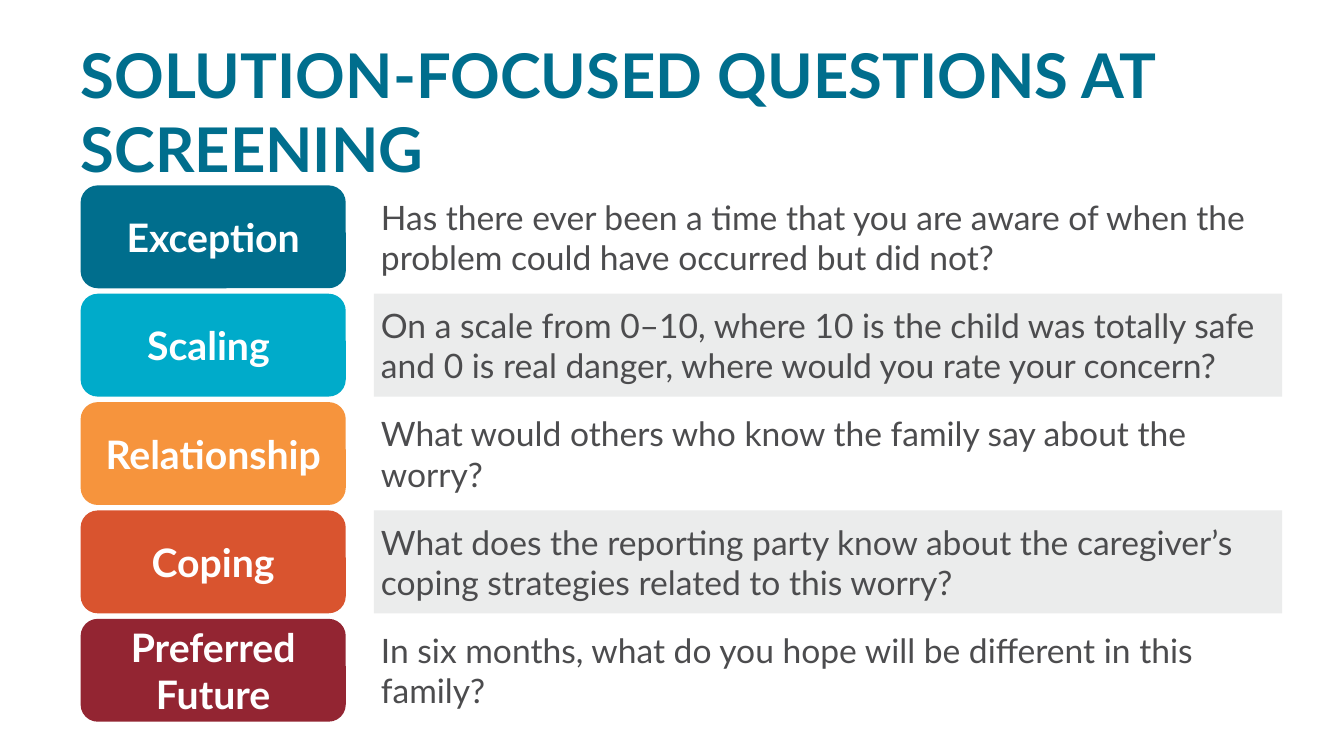
from lxml.etree import SubElement
from pptx import Presentation
from pptx.dml.color import RGBColor
from pptx.enum.shapes import MSO_SHAPE
from pptx.enum.text import MSO_ANCHOR, MSO_AUTO_SIZE, PP_ALIGN
from pptx.oxml.ns import qn
from pptx.util import Pt

TEAL = RGBColor(0x00, 0x6E, 0x8D)
CYAN = RGBColor(0x00, 0xAB, 0xCA)
ORANGE = RGBColor(0xF6, 0x94, 0x3D)
RUST = RGBColor(0xD9, 0x54, 0x2F)
MAROON = RGBColor(0x93, 0x25, 0x32)
WHITE = RGBColor(0xFF, 0xFF, 0xFF)
PALE_GREY = RGBColor(0xE9, 0xEA, 0xEA)
DARK_GREY = RGBColor(0x4C, 0x4C, 0x4E)

FIRST_TOP, ROW_PITCH, ROW_HEIGHT = 132.4, 77.4, 73.5
LABEL_LEFT, LABEL_WIDTH = 57.6, 189.4
QUESTION_LEFT, QUESTION_WIDTH = 267.1, 648.7
LABEL_INSETS = (0, 8.6, 0, 8.6)
QUESTION_INSETS = (5, 5.8, 8, 5.8)
QUESTION_OPACITY = 90

QUESTIONS = [
    ("Exception", TEAL,
     "Has there ever been a time that you are aware of when the problem "
     "could have occurred but did not?"),
    ("Scaling ", CYAN,
     "On a scale from 0–10, where 10 is the child was totally safe and 0 is "
     "real danger, where would you rate your concern?"),
    ("Relationship", ORANGE,
     "What would others who know the family say about the worry?"),
    ("Coping", RUST,
     "What does the reporting party know about the caregiver’s coping "
     "strategies related to this worry?"),
    ("Preferred Future", MAROON,
     "In six months, what do you hope will be different in this family?"),
]


def write_text(shape, text, size, color, bold, align, insets):
    frame = shape.text_frame
    frame.text = text
    left, top, right, bottom = (Pt(inset) for inset in insets)
    frame_format = {
        "word_wrap": True,
        "auto_size": MSO_AUTO_SIZE.NONE,
        "vertical_anchor": MSO_ANCHOR.MIDDLE,
        "margin_left": left,
        "margin_top": top,
        "margin_right": right,
        "margin_bottom": bottom,
    }
    for attribute, value in frame_format.items():
        setattr(frame, attribute, value)
    paragraph = frame.paragraphs[0]
    paragraph.alignment = align
    font = paragraph.runs[0].font
    for attribute, value in {"name": "Lato", "size": Pt(size), "bold": bold}.items():
        setattr(font, attribute, value)
    font.color.rgb = color


def place_title(slide, text):
    title = slide.shapes.title
    place = {"left": Pt(50.4), "top": Pt(28.8), "width": Pt(867.6), "height": Pt(100.8)}
    for attribute, value in place.items():
        setattr(title, attribute, value)
    write_text(title, text, 44, TEAL, True, PP_ALIGN.LEFT, (7.2, 3.6, 7.2, 3.6))


def add_panel(slide, preset, left, top, width, fill):
    panel = slide.shapes.add_shape(preset, Pt(left), Pt(top), Pt(width), Pt(ROW_HEIGHT))
    panel.shadow.inherit = False
    panel.fill.solid()
    panel.fill.fore_color.rgb = fill
    panel.line.fill.background()
    return panel


def set_opacity(shape, percent):
    color = shape.fill._xPr.find(qn("a:solidFill"))[0]
    SubElement(color, qn("a:alpha"), val=str(percent * 1000))


def add_question_row(slide, top, label, label_fill, question, band_fill):
    band = add_panel(slide, MSO_SHAPE.RECTANGLE, QUESTION_LEFT, top,
                     QUESTION_WIDTH, band_fill)
    set_opacity(band, QUESTION_OPACITY)
    write_text(band, question, 24, DARK_GREY, False, PP_ALIGN.LEFT, QUESTION_INSETS)
    tag = add_panel(slide, MSO_SHAPE.ROUNDED_RECTANGLE, LABEL_LEFT, top,
                    LABEL_WIDTH, label_fill)
    write_text(tag, label, 28, WHITE, True, PP_ALIGN.CENTER, LABEL_INSETS)


def main():
    deck = Presentation()
    deck.slide_width, deck.slide_height = Pt(960), Pt(540)
    title_only = deck.slide_layouts[5]
    slide = deck.slides.add_slide(title_only)
    place_title(slide, "SOLUTION-FOCUSED QUESTIONS AT SCREENING")
    for row, (label, label_fill, question) in enumerate(QUESTIONS):
        band_fill = PALE_GREY if row % 2 else WHITE
        add_question_row(slide, FIRST_TOP + row * ROW_PITCH, label, label_fill,
                         question, band_fill)
    deck.save("out.pptx")


if __name__ == "__main__":
    main()
